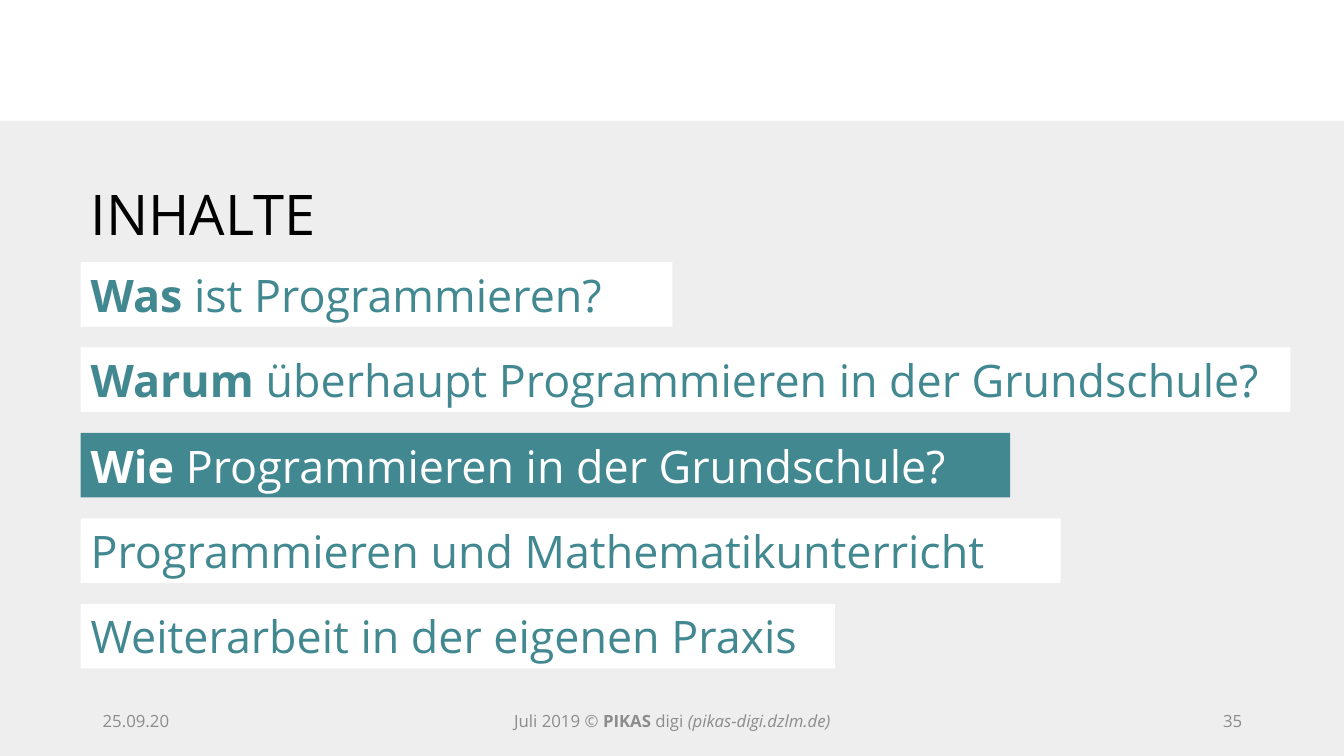
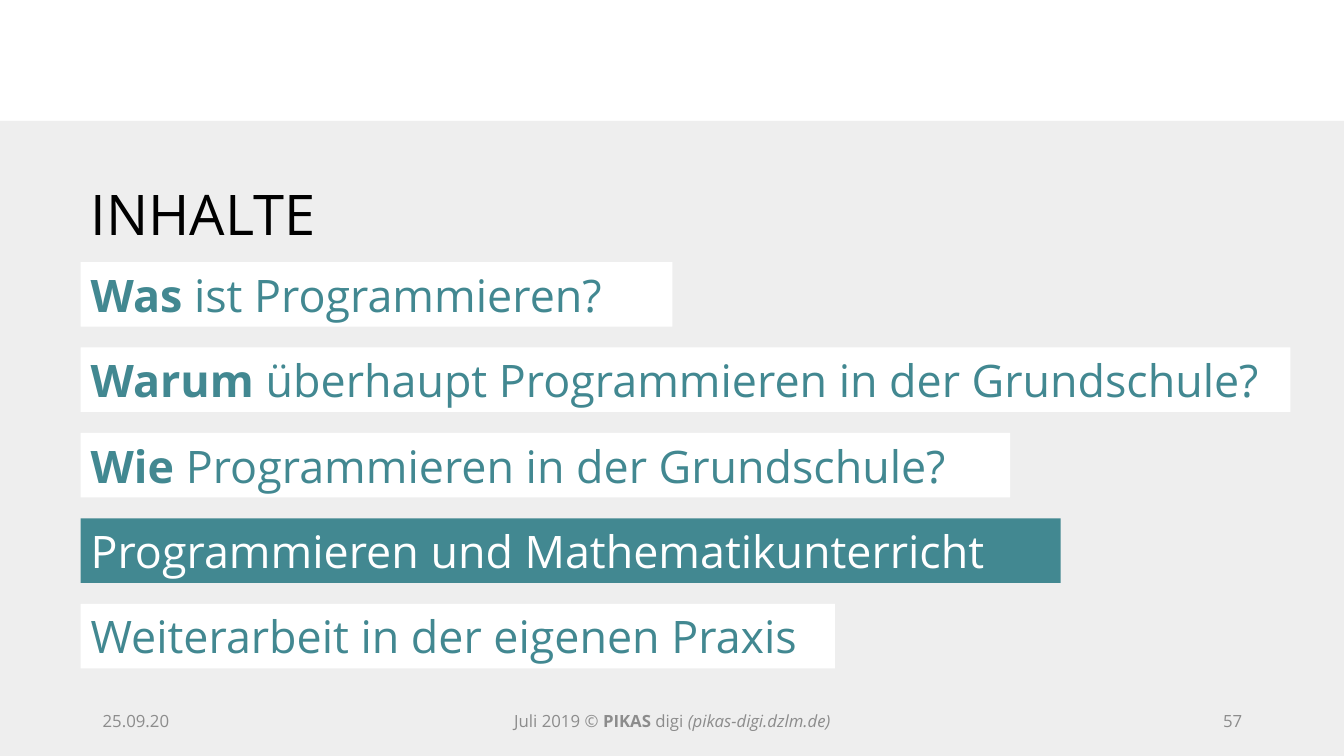
import dataclasses

import pptx
import pptx.dml.color
import pptx.enum.shapes
import pptx.enum.text
import pptx.util

Inches = pptx.util.Inches
Align = pptx.enum.text.PP_ALIGN

# Content: text runs are (text, style), style "b" is bold and "i" is italic
TITLE = "INHALTE"
TOPICS = [  # (bar width in inches, runs)
    (5.87, [("Was", "b"), (" ist Programmieren?", "")]),
    (12, [("Warum", "b"), (" überhaupt Programmieren in der Grundschule?", "")]),
    (9.22, [("Wie ", "b"), ("Programmieren in der Grundschule?", "")]),
    (9.72, [("Programmieren und Mathematikunterricht", "")]),
    (7.48, [("Weiterarbeit in der eigenen Praxis", "")]),
]
DATE = [("25.09.20", "")]
CREDIT = [
    ("Juli 2019 © ", ""),
    ("PIKAS", "b"),
    (" digi ", ""),
    ("(pikas-digi.dzlm.de)", "i"),
]
SLIDES = [  # (slide number, index of the current topic)
    ("35", 2),
    ("57", 3),
]


@dataclasses.dataclass(frozen=True)
class Theme:
    font: str = "Open Sans"
    teal: str = "428891"
    white: str = "FFFFFF"
    black: str = "000000"
    panel: str = "EEEEEE"
    muted: str = "8C8C8C"
    title_size: int = 40
    topic_size: int = 32
    footer_size: int = 12


THEME = Theme()

# Layout in inches
WIDTH, HEIGHT = 13.33, 7.5
PANEL_TOP = 1.2
LEFT = 0.8
TITLE_AREA = (LEFT, 1.73, 4.45, 0.77)
BAR_TOP, BAR_HEIGHT, BAR_PITCH = 2.6, 0.64, 0.8475
FOOTER_TOP, FOOTER_HEIGHT = 6.95, 0.4


def rgb(value):
    return pptx.dml.color.RGBColor.from_string(value)


def write(box, runs, size, color, align=Align.LEFT):
    frame = box.text_frame
    frame.word_wrap = True
    frame.auto_size = pptx.enum.text.MSO_AUTO_SIZE.NONE
    frame.vertical_anchor = pptx.enum.text.MSO_ANCHOR.MIDDLE
    frame.margin_left = frame.margin_right = Inches(0.1)
    frame.margin_top = frame.margin_bottom = 0
    para = frame.paragraphs[0]
    para.alignment = align
    for text, style in runs:
        span = para.add_run()
        span.text = text
        span.font.name = THEME.font
        span.font.size = pptx.util.Pt(size)
        span.font.color.rgb = rgb(color)
        span.font.bold = style == "b"
        span.font.italic = style == "i"


def add_bar(page, area, fill):
    bar = page.shapes.add_shape(
        pptx.enum.shapes.MSO_SHAPE.RECTANGLE, *map(Inches, area)
    )
    bar.shadow.inherit = False
    bar.fill.solid()
    bar.fill.fore_color.rgb = rgb(fill)
    bar.line.fill.background()
    return bar


def add_panel(page):
    """Move the grey panel to the layout, behind everything on each slide."""
    panel = add_bar(page, (0, PANEL_TOP, WIDTH, HEIGHT - PANEL_TOP), THEME.panel)
    page.slide_layout.shapes._spTree.insert(2, panel._element)


def add_title(page):
    title = page.shapes.title
    title.left, title.top, title.width, title.height = map(Inches, TITLE_AREA)
    write(title, [(TITLE, "")], THEME.title_size, THEME.black)


def add_topics(page, current):
    for index, (width, runs) in enumerate(TOPICS):
        fill, ink = THEME.white, THEME.teal
        if index == current:
            fill, ink = ink, fill
        top = BAR_TOP + index * BAR_PITCH
        bar = add_bar(page, (LEFT, top, width, BAR_HEIGHT), fill)
        write(bar, runs, THEME.topic_size, ink)


def add_footer(page, number):
    fields = [
        (0.92, 3, DATE, Align.LEFT),
        (4.42, 4.5, CREDIT, Align.CENTER),
        (9.42, 3, [(number, "")], Align.RIGHT),
    ]
    for left, width, runs, align in fields:
        area = (left, FOOTER_TOP, width, FOOTER_HEIGHT)
        box = page.shapes.add_textbox(*map(Inches, area))
        write(box, runs, THEME.footer_size, THEME.muted, align)


def main():
    deck = pptx.Presentation()
    deck.slide_width, deck.slide_height = Inches(WIDTH), Inches(HEIGHT)
    title_only = deck.slide_layouts[5]
    for position, (number, current) in enumerate(SLIDES):
        page = deck.slides.add_slide(title_only)
        if position == 0:
            add_panel(page)
        add_title(page)
        add_topics(page, current)
        add_footer(page, number)
    deck.save("out.pptx")


if __name__ == "__main__":
    main()
